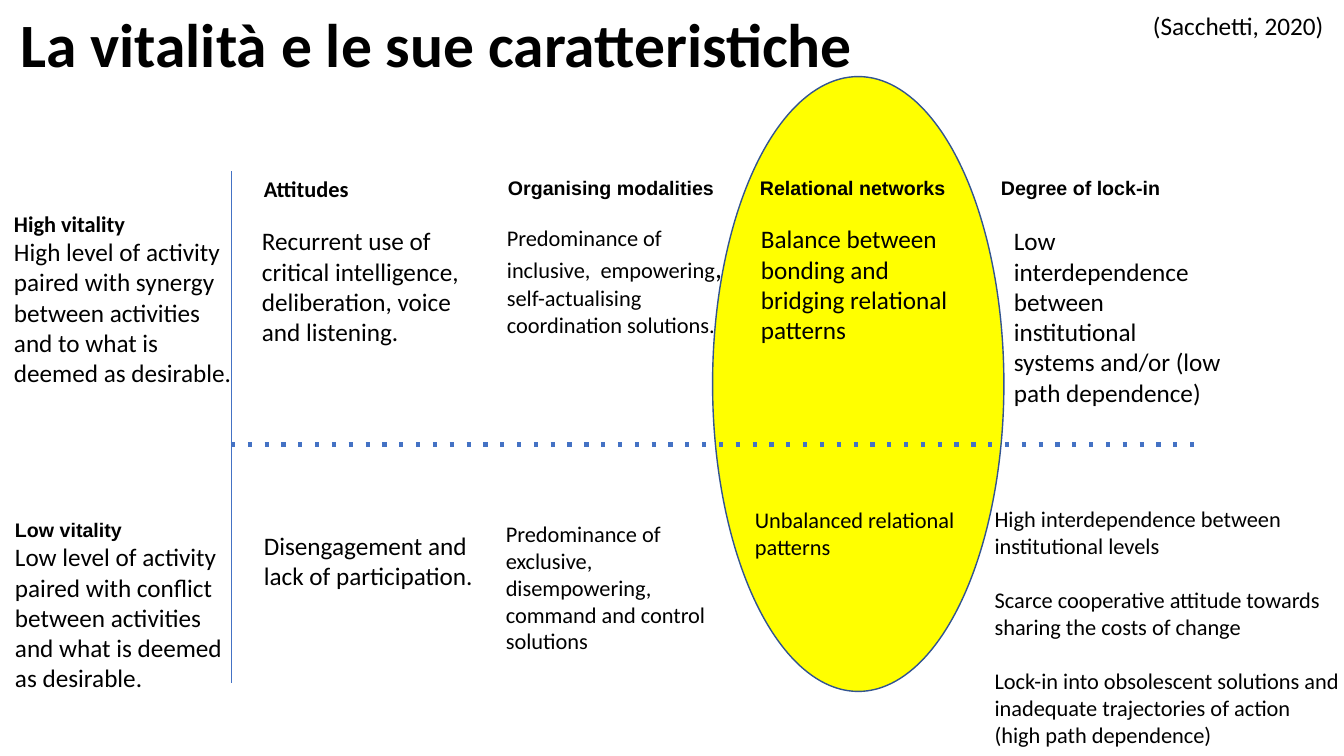
from dataclasses import dataclass

from lxml import etree
from pptx import Presentation
from pptx.dml.color import RGBColor
from pptx.enum.shapes import MSO_CONNECTOR, MSO_SHAPE
from pptx.enum.text import MSO_ANCHOR, MSO_AUTO_SIZE, PP_ALIGN
from pptx.oxml.ns import qn
from pptx.util import Pt

STRAIGHT = MSO_CONNECTOR.STRAIGHT
OVAL = MSO_SHAPE.OVAL
TOP, MIDDLE = MSO_ANCHOR.TOP, MSO_ANCHOR.MIDDLE
FIT_SHAPE, NO_FIT = MSO_AUTO_SIZE.SHAPE_TO_FIT_TEXT, MSO_AUTO_SIZE.NONE
LEFT = PP_ALIGN.LEFT
TITLE_ONLY = 5


@dataclass(frozen=True)
class TextStyle:
    font: str
    size: float
    bold: bool = False


@dataclass(frozen=True)
class Theme:
    text = RGBColor(0x00, 0x00, 0x00)
    highlight = RGBColor(0xFF, 0xFF, 0x00)
    outline = RGBColor(0x32, 0x54, 0x91)
    axis = RGBColor(0x44, 0x72, 0xC4)
    title = TextStyle("Calibri", 44, True)
    heading = TextStyle("Calibri", 16, True)
    small_heading = TextStyle("Arial", 14, True)
    body = TextStyle("Calibri", 18)
    small_body = TextStyle("Calibri", 16)
    comma = TextStyle("Calibri", 20)
    side_inset = 7.2
    thin_inset = 3.6
    cell_inset = 7.2
    paragraph_gap = 19.5


THEME = Theme()

# Column headings: left, top, width, height, text, style
HEADINGS = [
    (181.4, 121.7, 176, 26.6, "Attitudes", THEME.heading),
    (355.7, 122.4, 176, 24.5, "Organising modalities", THEME.small_heading),
    (535.7, 122.4, 176, 24.5, "Relational networks", THEME.small_heading),
    (707.8, 122.4, 167, 24.5, "Degree of lock-in", THEME.small_heading),
]

# Row labels: left, top, width, height, heading, heading style, description
ROW_LABELS = [
    (2.9, 146.2, 176.4, 113.8, "High vitality", THEME.heading,
     "High level of activity paired with synergy between activities "
     "and to what is deemed as desirable."),
    (3.6, 366.5, 167, 126, "Low vitality", THEME.small_heading,
     "Low level of activity paired with conflict between activities "
     "and what is deemed as desirable."),
]

# Cells: left, top, width, height, vertical inset, style, paragraphs
CELLS = [
    (180, 157.7, 177.8, 74.9, THEME.thin_inset, THEME.body,
     ["Recurrent use of critical intelligence, deliberation, voice and listening."]),
    (536.4, 152.6, 167, 101.5, THEME.cell_inset, THEME.body,
     ["Balance between bonding and bridging relational patterns"]),
    (717.1, 154.1, 162.7, 82.1, THEME.cell_inset, THEME.body,
     ["Low interdependence between institutional systems and/or "
      "(low path dependence)"]),
    (181.4, 375.1, 167.8, 74.9, THEME.thin_inset, THEME.body,
     ["Disengagement and lack of participation."]),
    (354.2, 364.3, 179.3, 162.7, THEME.cell_inset, THEME.small_body,
     ["Predominance of exclusive, disempowering, command and control solutions"]),
    (532.1, 354.2, 167, 53.3, THEME.cell_inset, THEME.small_body,
     ["Unbalanced relational patterns"]),
]


def points(*values):
    return [Pt(value) for value in values]


def remove_shadow(connector):
    etree.SubElement(connector._element.spPr, qn("a:effectLst"))


def format_frame(frame, vertical_inset, anchor, auto_size):
    frame.word_wrap = True
    frame.auto_size = auto_size
    frame.vertical_anchor = anchor
    frame.margin_left = frame.margin_right = Pt(THEME.side_inset)
    frame.margin_top = frame.margin_bottom = Pt(vertical_inset)


def add_run(paragraph, text, style):
    run = paragraph.add_run()
    run.text = text
    run.font.name = style.font
    run.font.size = Pt(style.size)
    run.font.bold = style.bold
    run.font.color.rgb = THEME.text


def add_text(slide, box, paragraphs, vertical_inset=THEME.thin_inset):
    """Each paragraph is a list of (text, style) runs."""
    frame = slide.shapes.add_textbox(*points(*box)).text_frame
    format_frame(frame, vertical_inset, TOP, FIT_SHAPE)
    for index, runs in enumerate(paragraphs):
        paragraph = frame.add_paragraph() if index else frame.paragraphs[0]
        for text, style in runs:
            add_run(paragraph, text, style)
    return frame


def add_title(slide, box, text):
    title = slide.shapes.title
    title.left, title.top, title.width, title.height = points(*box)
    format_frame(title.text_frame, THEME.thin_inset, MIDDLE, NO_FIT)
    paragraph = title.text_frame.paragraphs[0]
    paragraph.alignment = LEFT
    paragraph.line_spacing = 0.9
    add_run(paragraph, text, THEME.title)


def add_highlight(slide, box):
    ellipse = slide.shapes.add_shape(OVAL, *points(*box))
    ellipse.shadow.inherit = False
    ellipse.fill.solid()
    ellipse.fill.fore_color.rgb = THEME.highlight
    ellipse.line.color.rgb = THEME.outline
    ellipse.line.width = Pt(1)


def add_axis(slide, ends, width, dotted=False):
    axis = slide.shapes.add_connector(STRAIGHT, *points(*ends))
    axis.line.color.rgb = THEME.axis
    axis.line.width = Pt(width)
    if dotted:
        outline = axis._element.spPr.find(qn("a:ln"))
        etree.SubElement(outline, qn("a:prstDash"), val="dot")
    remove_shadow(axis)


def main():
    presentation = Presentation()
    presentation.slide_width, presentation.slide_height = points(960, 540)
    slide = presentation.slides.add_slide(presentation.slide_layouts[TITLE_ONLY])

    # Title, highlighted column and source
    add_title(slide, (7.2, -18, 828, 104.4), "La vitalità e le sue caratteristiche")
    add_highlight(slide, (509, 54.7, 208.1, 439.2))
    add_text(slide, (816.5, 3.6, 141, 29), [[("(Sacchetti, 2020)", THEME.body)]])

    # Headings and row labels
    for *box, text, style in HEADINGS:
        add_text(slide, box, [[(text, style)]])
    for *box, heading, style, description in ROW_LABELS:
        add_text(slide, box, [[(heading, style)], [(description, THEME.body)]])

    # Cells
    for *box, inset, style, texts in CELLS:
        add_text(slide, box, [[(text, style)] for text in texts], inset)
    add_text(slide, (355, 152.6, 177.8, 118.8), [[
        ("Predominance of inclusive,  empowering", THEME.small_body),
        (", ", THEME.comma),
        ("self-actualising coordination solutions.", THEME.small_body),
    ]], THEME.cell_inset)

    # Lock-in effects, spaced apart
    effects = [
        "High interdependence between institutional levels",
        "Scarce cooperative attitude towards sharing the costs of change",
        "Lock-in into obsolescent solutions and inadequate trajectories of action",
        "(high path dependence)",
    ]
    frame = add_text(slide, (703.4, 353.5, 268.6, 186),
                     [[(text, THEME.small_body)] for text in effects],
                     THEME.cell_inset)
    for paragraph in frame.paragraphs[1:3]:
        paragraph.space_before = Pt(THEME.paragraph_gap)

    # Axes
    add_axis(slide, (165, 317.5, 857, 317.5), 3, dotted=True)
    add_axis(slide, (165, 122.4, 165, 488.2), 0.5)

    presentation.save("out.pptx")


if __name__ == "__main__":
    main()
